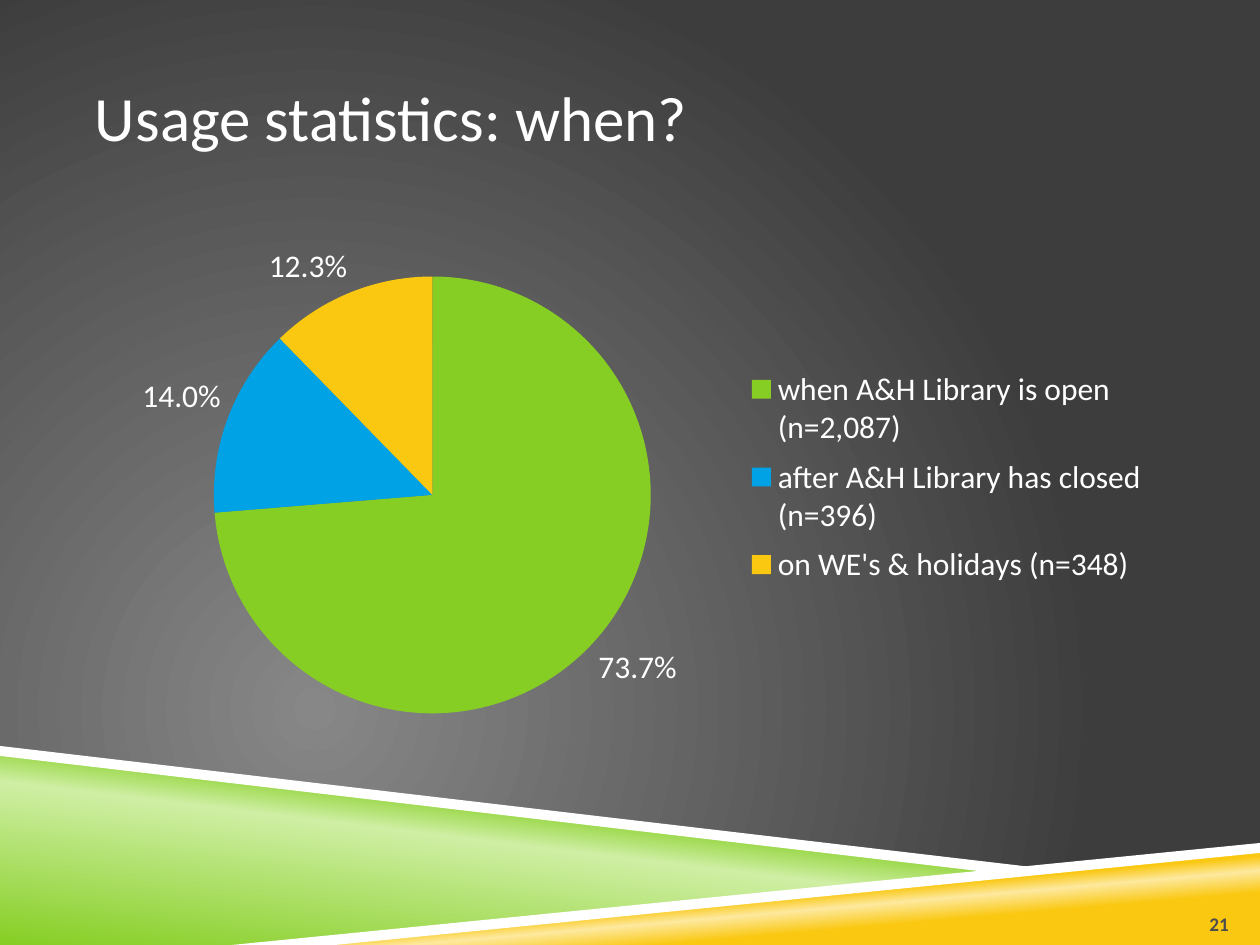
from dataclasses import dataclass
from lxml import etree
from pptx import Presentation
from pptx.chart.data import CategoryChartData
from pptx.dml.color import RGBColor
from pptx.enum.chart import XL_CHART_TYPE, XL_LABEL_POSITION, XL_LEGEND_POSITION
from pptx.enum.text import MSO_ANCHOR, PP_ALIGN
from pptx.oxml import parse_xml
from pptx.oxml.ns import nsdecls, qn
from pptx.util import Pt

PX = 914400 / 126  # EMU per px


@dataclass(frozen=True)
class Theme:
    font: str = "Calibri"
    white: str = "FFFFFF"
    green: str = "86CE24"
    light_green: str = "CFEFA4"
    blue: str = "00A2E6"
    yellow: str = "FAC810"
    light_yellow: str = "FDE99F"
    bg_center: str = "878787"
    bg_edge: str = "3D3D3D"
    number: str = "4D4D4D"
    title_size: int = 36
    chart_size: int = 18
    number_size: int = 11


theme = Theme()


def set_gradient(props, stops, direction):
    """Swap the solid fill in props for a gradient."""
    gs = "".join(f'<a:gs pos="{pos * 1000}"><a:srgbClr val="{color}"/></a:gs>'
                 for pos, color in stops)
    grad = parse_xml(f'<a:gradFill {nsdecls("a")} rotWithShape="1">'
                     f'<a:gsLst>{gs}</a:gsLst>{direction}</a:gradFill>')
    props.replace(props.find(qn("a:solidFill")), grad)


def style_font(font, size, color, bold=False):
    font.name = theme.font
    font.size = Pt(size)
    font.bold = bold
    font.color.rgb = RGBColor.from_string(color)


prs = Presentation()
prs.slide_width, prs.slide_height = round(1260 * PX), round(945 * PX)
slide = prs.slides.add_slide(prs.slide_layouts[5])

# Background: radial gradient centred at lower left
slide.background.fill.solid()
set_gradient(slide.element.cSld.find(qn("p:bg")).find(qn("p:bgPr")),
             [(0, theme.bg_center), (100, theme.bg_edge)],
             '<a:path path="circle"><a:fillToRect l="50000" t="100000" '
             'r="100000" b="50000"/></a:path>')

# Bottom wedges and their white edges: points, gradient stops, angle
bands = [
    ([(0, 752), (998, 872), (252, 945), (0, 945)],
     [(0, theme.green), (52, theme.light_green), (66, theme.green)], 277),
    ([(249, 945), (1260, 847), (1260, 945)],
     [(28, theme.yellow), (40, theme.light_yellow), (48, theme.yellow)], 265),
    ([(0, 746), (0, 756), (995, 873), (1048, 869)], None, 0),
    ([(1260, 843), (232, 945), (335, 945), (1260, 853)], None, 0),
]
for points, stops, angle in bands:
    builder = slide.shapes.build_freeform(*points[0], scale=PX)
    builder.add_line_segments(points[1:], close=True)
    sp = builder.convert_to_shape()
    sp.shadow.inherit = False
    sp.line.fill.background()
    sp.fill.solid()
    sp.fill.fore_color.rgb = RGBColor.from_string(theme.white)
    if stops:
        set_gradient(sp.element.spPr, stops,
                     f'<a:lin ang="{angle * 60000}" scaled="0"/>')

# Title
title = slide.shapes.title
title.left, title.top, title.width, title.height = (
    round(v * PX) for v in (95, 38, 1071, 157))
tf = title.text_frame
tf.text = "Usage statistics: when?"
tf.margin_left = tf.margin_right = 0
tf.vertical_anchor = MSO_ANCHOR.MIDDLE
p = tf.paragraphs[0]
p.alignment = PP_ALIGN.LEFT
style_font(p.runs[0].font, theme.title_size, theme.white)

# Pie chart
data = CategoryChartData()
data.categories = ["when A&H Library is open (n=2,087)",
                   "after A&H Library has closed (n=396)",
                   "on WE's & holidays (n=348)"]
data.add_series("Series 1", (73.7, 14, 12.3))
chart = slide.shapes.add_chart(
    XL_CHART_TYPE.PIE, *(round(v * PX) for v in (95, 220, 1071, 514)), data).chart
chart.has_title = False
style_font(chart.font, theme.chart_size, theme.white)
chart.has_legend = True
legend = chart.legend
legend.position = XL_LEGEND_POSITION.RIGHT
legend.include_in_layout = False

plot = chart.plots[0]
plot.vary_by_categories = True
for i, color in enumerate((theme.green, theme.blue, theme.yellow)):
    fill = plot.series[0].points[i].format.fill
    fill.solid()
    fill.fore_color.rgb = RGBColor.from_string(color)
plot.has_data_labels = True
labels = plot.data_labels
labels.show_percentage = True
labels.show_value = False
labels.number_format = "0.0%"
labels.number_format_is_linked = False
labels.position = XL_LABEL_POSITION.OUTSIDE_END
style_font(labels.font, theme.chart_size, theme.white)

# Fixed places for pie and legend, as fractions of the chart
plot_area = chart.element.find(".//" + qn("c:plotArea"))
for old in plot_area.findall(qn("c:layout")):
    plot_area.remove(old)
for old in legend._element.findall(qn("c:layout")):
    legend._element.remove(old)
for parent, index, target, box in (
        (plot_area, 0, True, (0.11, 0.11, 0.41, 0.85)),
        (legend._element, 1, False, (0.6, 0.27, 0.39, 0.46))):
    layout = etree.Element(qn("c:layout"))
    manual = etree.SubElement(layout, qn("c:manualLayout"))
    if target:
        etree.SubElement(manual, qn("c:layoutTarget")).set("val", "inner")
    for tag in ("xMode", "yMode"):
        etree.SubElement(manual, qn(f"c:{tag}")).set("val", "edge")
    for tag, value in zip("xywh", box):
        etree.SubElement(manual, qn(f"c:{tag}")).set("val", str(value))
    parent.insert(index, layout)

# Slide number
tf = slide.shapes.add_textbox(
    *(round(v * PX) for v in (1166, 885, 63, 50))).text_frame
tf.word_wrap = True
tf.margin_left = tf.margin_right = tf.margin_bottom = 0
tf.vertical_anchor = MSO_ANCHOR.BOTTOM
tf.text = "21"
p = tf.paragraphs[0]
p.alignment = PP_ALIGN.RIGHT
style_font(p.runs[0].font, theme.number_size, theme.number, bold=True)

prs.save("out.pptx")
